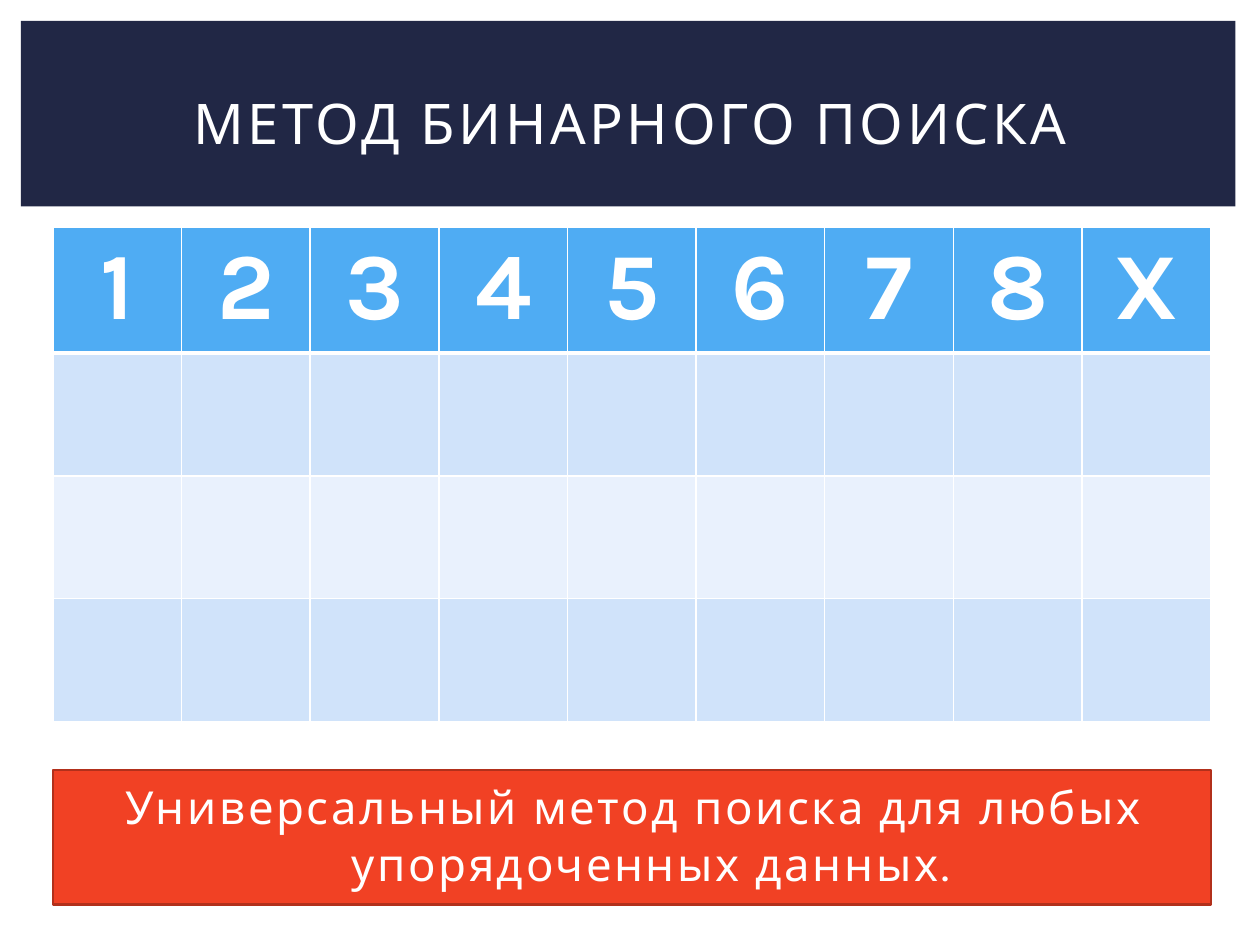
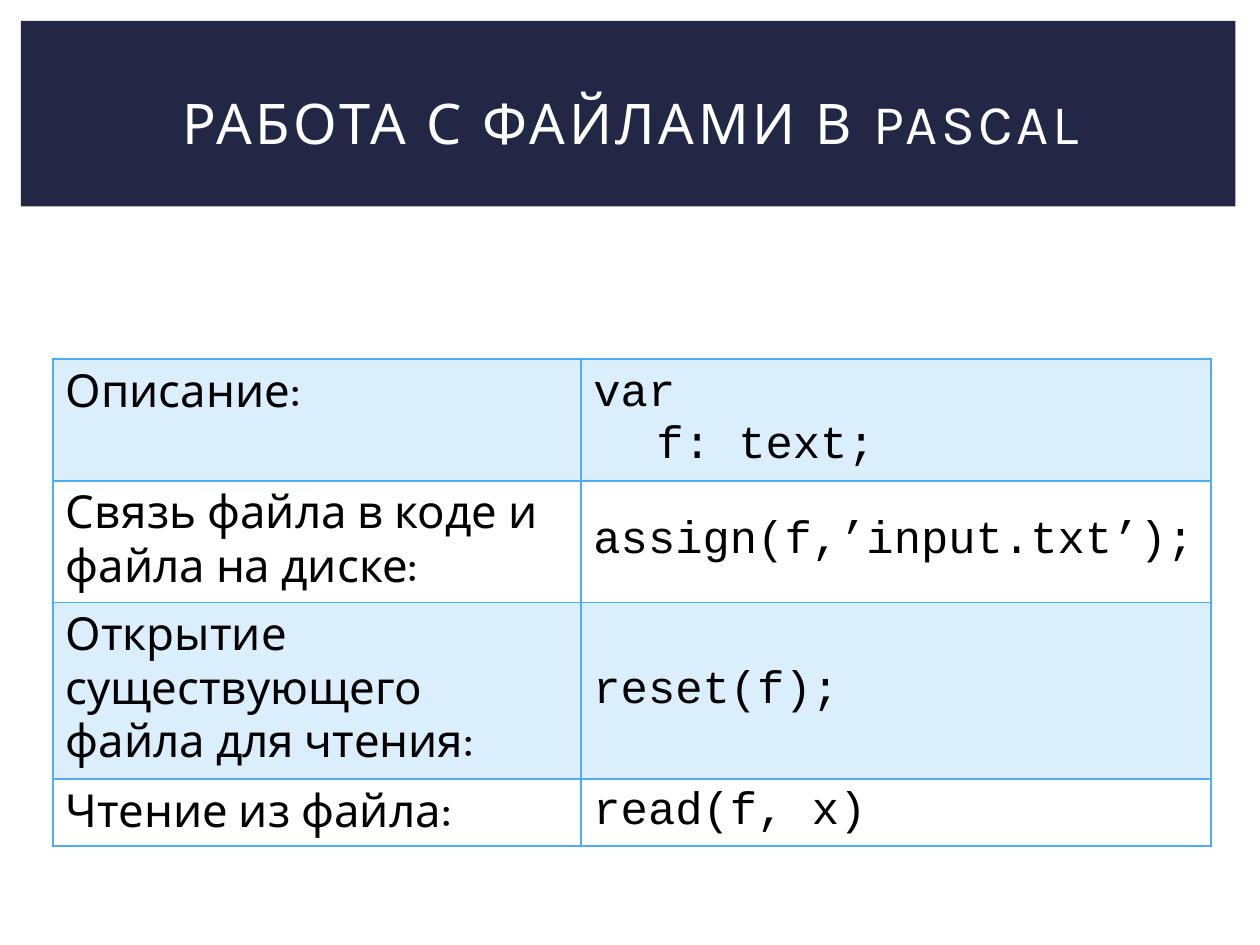
from pptx import Presentation
from pptx.dml.color import RGBColor as RGB
from pptx.enum.shapes import MSO_SHAPE as Shape
from pptx.enum.text import MSO_ANCHOR as Anchor, PP_ALIGN as Align
from pptx.oxml.ns import qn
from pptx.util import Pt
from lxml import etree

theme = {
    "navy": "212745", "white": "FFFFFF", "black": "000000",
    "blue": "4FACF3", "row_dark": "D0E3FA", "row_light": "E9F1FD",
    "red": "F14124", "red_edge": "B2301B",
    "text": "Karla", "code": "Courier New",
    "title_size": 32, "body_size": 26, "number_size": 54,
}
LEFT, WIDTH = 30.24, 661.68


def write(frame, lines, color, align=Align.LEFT, spacing=0, **font_format):
    """Fill the frame with one paragraph per line; spacing is between letters, in points."""
    frame.word_wrap = True
    for number, line in enumerate(lines):
        paragraph = frame.add_paragraph() if number else frame.paragraphs[0]
        paragraph.alignment = align
        run = paragraph.add_run()
        run.text = line
        run.font.color.rgb = RGB.from_string(theme[color])
        for name, value in font_format.items():
            setattr(run.font, name, value)
        if spacing:
            run._r.get_or_add_rPr().set("spc", str(int(spacing * 100)))


def style_cell(cell, border, fill=None, opacity=100, top=1, bottom=1):
    """Draw the four borders, then the fill, which must follow them in the XML."""
    properties = cell._tc.get_or_add_tcPr()
    for side, width in {"lnL": 1, "lnR": 1, "lnT": top, "lnB": bottom}.items():
        line = etree.SubElement(properties, qn(f"a:{side}"), w=str(Pt(width)))
        solid = etree.SubElement(line, qn("a:solidFill"))
        etree.SubElement(solid, qn("a:srgbClr"), val=theme[border])
    if fill is None:
        cell.fill.background()
        return
    cell.fill.solid()
    cell.fill.fore_color.rgb = RGB.from_string(theme[fill])
    if opacity < 100:
        color = properties.find(qn("a:solidFill")).find(qn("a:srgbClr"))
        etree.SubElement(color, qn("a:alpha"), val=str(opacity * 1000))


deck = Presentation()
deck.slide_width, deck.slide_height = Pt(720), Pt(540)

slides = []
for title in ("МЕТОД БИНАРНОГО ПОИСКА", "РАБОТА С ФАЙЛАМИ В PASCAL"):
    slide = deck.slides.add_slide(deck.slide_layouts[6])
    band = slide.shapes.add_shape(Shape.RECTANGLE, Pt(12), Pt(12), Pt(694), Pt(106))
    band.shadow.inherit = False
    band.fill.solid()
    band.fill.fore_color.rgb = RGB.from_string(theme["navy"])
    band.line.fill.background()
    heading = slide.shapes.add_textbox(Pt(LEFT), Pt(28), Pt(660), Pt(83)).text_frame
    heading.vertical_anchor = Anchor.MIDDLE
    write(heading, [title], "white", Align.CENTER, 2,
          name=theme["text"], size=Pt(theme["title_size"]))
    slides.append(slide)
search_slide, files_slide = slides

# Binary search: numbered columns above three empty rows
headers = "12345678X"
row_fills = ["blue", "row_dark", "row_light", "row_dark"]
steps = search_slide.shapes.add_table(
    len(row_fills), len(headers), Pt(LEFT), Pt(129.6), Pt(WIDTH), Pt(281)).table
steps.first_row = steps.horz_banding = False
for column in steps.columns:
    column.width = Pt(WIDTH / len(headers))
for r, fill in enumerate(row_fills):
    steps.rows[r].height = Pt(70.25)
    for c, header in enumerate(headers):
        cell = steps.cell(r, c)
        style_cell(cell, "white", fill, top=3 if r == 1 else 1, bottom=3 if r == 0 else 1)
        if r == 0:
            write(cell.text_frame, [header], "white", Align.CENTER,
                  name=theme["text"], size=Pt(theme["number_size"]), bold=True)

summary = search_slide.shapes.add_shape(
    Shape.RECTANGLE, Pt(LEFT), Pt(440), Pt(WIDTH), Pt(77))
summary.shadow.inherit = False
summary.fill.solid()
summary.fill.fore_color.rgb = RGB.from_string(theme["red"])
summary.line.color.rgb = RGB.from_string(theme["red_edge"])
summary.line.width = Pt(1.5)
summary.text_frame.vertical_anchor = Anchor.TOP
write(summary.text_frame, ["Универсальный метод поиска для любых упорядоченных данных."],
      "white", Align.CENTER, 1.5, name=theme["text"], size=Pt(theme["body_size"]))
conclusion = summary.text_frame.paragraphs[0]
conclusion.space_before = Pt(5)
conclusion.line_spacing = 1.05
indents = conclusion._p.get_or_add_pPr()
for name, value in {"marL": 21.6, "indent": -18}.items():
    indents.set(name, str(Pt(value)))

# Pascal files: what is done and the code that does it
operations = [
    ("Описание:", ["var", "\tf: text;"], 66),
    ("Связь файла в коде и файла на диске:", ["assign(f,’input.txt’);"], 68),
    ("Открытие существующего файла для чтения:", ["reset(f);"], 98.6),
    ("Чтение из файла:", ["read(f, x)"], 37.8),
]
commands = files_slide.shapes.add_table(
    len(operations), 2, Pt(LEFT), Pt(205.2), Pt(WIDTH), Pt(270.4)).table
commands.first_row = commands.horz_banding = False
for column, width in zip(commands.columns, (301.68, 360)):
    column.width = Pt(width)
for r, (purpose, code, height) in enumerate(operations):
    commands.rows[r].height = Pt(height)
    for c, (lines, font) in enumerate((([purpose], "text"), (code, "code"))):
        cell = commands.cell(r, c)
        style_cell(cell, "blue", None if r % 2 else "blue", opacity=20)
        cell.vertical_anchor = Anchor.MIDDLE if font == "code" else Anchor.TOP
        write(cell.text_frame, lines, "black",
              name=theme[font], size=Pt(theme["body_size"]))

deck.save("out.pptx")
